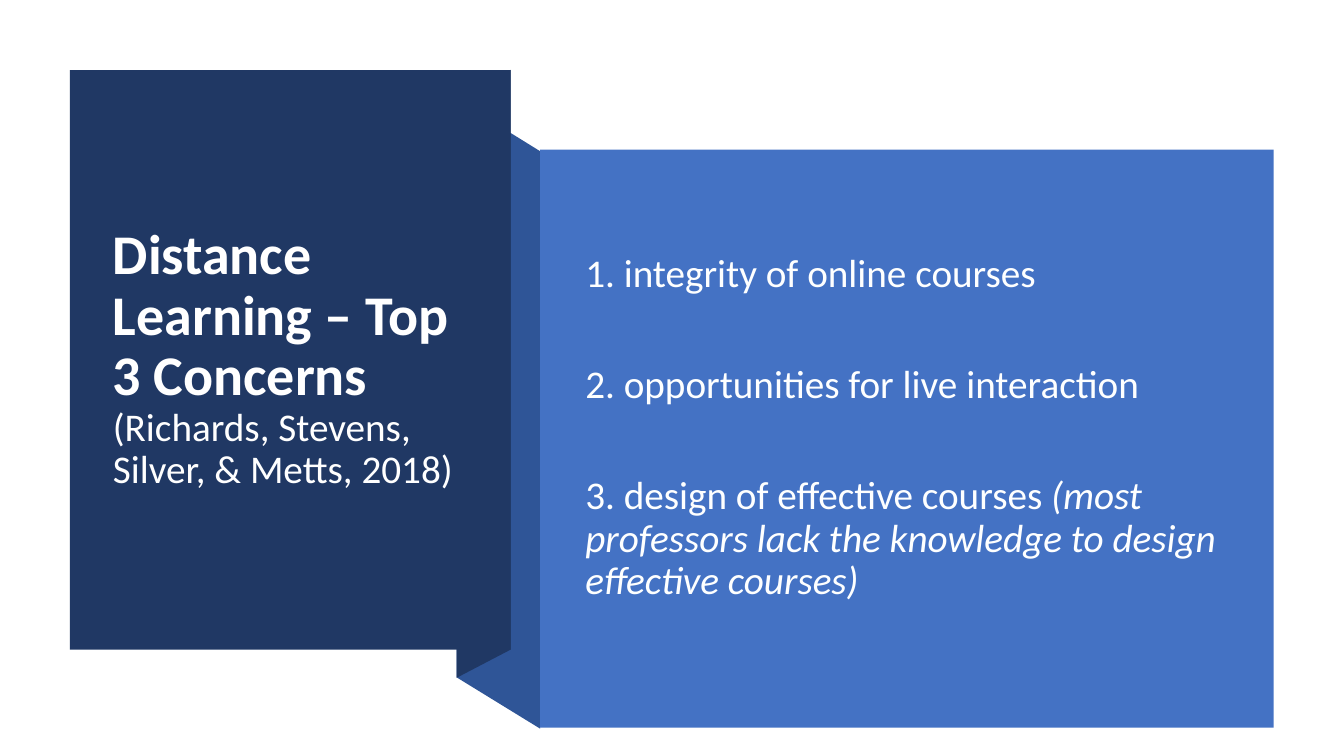
from dataclasses import dataclass

import pptx
import pptx.dml.color
import pptx.enum.shapes
import pptx.enum.text
import pptx.util
from pptx.util import Cm

COLOURS = {"navy": "203864", "fold": "2F5597", "blue": "4472C4",
           "title": "FFFFFF", "body": "FEFFFF"}
FONT = "Calibri"


@dataclass
class Panel:
    left: float
    top: float
    width: float
    height: float
    colour: str


@dataclass
class Flap:
    corners: list[tuple[float, float]]
    colour: str


@dataclass
class Span:
    text: str
    size: int = 28
    colour: str = "body"
    bold: bool = False
    italic: bool = False


FLAPS = [
    Flap([(13.61, 18.36), (11.51, 17.07), (11.51, 2.51), (13.61, 3.81)], "fold"),
    Flap([(12.87, 16.37), (11.51, 17.08), (11.51, 2.5), (12.87, 1.76)], "navy"),
]
PANELS = [
    Panel(1.76, 1.77, 11.11, 14.6, "navy"),
    Panel(13.61, 3.77, 18.49, 14.57, "blue"),
]
TITLE = [
    Span("Distance Learning – Top 3 Concerns ", 40, "title", bold=True),
    Span("(Richards, Stevens, Silver, & Metts, 2018)", 28, "title"),
]
CONCERNS = [
    [Span("1. integrity of online courses")],
    [Span("2. opportunities for live interaction")],
    [Span("3. design of effective courses "),
     Span("(most professors lack the knowledge to design effective courses)",
          italic=True)],
]


def rgb(name: str) -> pptx.dml.color.RGBColor:
    return pptx.dml.color.RGBColor.from_string(COLOURS[name])


def paint(shape, colour: str) -> None:
    shape.shadow.inherit = False
    shape.fill.solid()
    shape.fill.fore_color.rgb = rgb(colour)
    shape.line.fill.background()


def add_flap(slide, flap: Flap) -> None:
    start, *others = [(Cm(x), Cm(y)) for x, y in flap.corners]
    builder = slide.shapes.build_freeform(*start)
    builder.add_line_segments(others, close=True)
    paint(builder.convert_to_shape(), flap.colour)


def add_panel(slide, panel: Panel) -> None:
    shape = slide.shapes.add_shape(
        pptx.enum.shapes.MSO_SHAPE.RECTANGLE,
        Cm(panel.left), Cm(panel.top), Cm(panel.width), Cm(panel.height))
    paint(shape, panel.colour)


def add_span(para, span: Span) -> None:
    run = para.add_run()
    run.text = span.text
    run.font.name = FONT
    run.font.size = pptx.util.Pt(span.size)
    run.font.bold = span.bold
    run.font.italic = span.italic
    run.font.color.rgb = rgb(span.colour)


def format_frame(frame) -> None:
    frame.word_wrap = True
    frame.auto_size = pptx.enum.text.MSO_AUTO_SIZE.NONE
    frame.vertical_anchor = pptx.enum.text.MSO_ANCHOR.MIDDLE


def format_para(para) -> None:
    para.alignment = pptx.enum.text.PP_ALIGN.LEFT
    para.line_spacing = 0.9


def fill_title(slide) -> None:
    title = slide.shapes.title
    title.left, title.top = Cm(2.59), Cm(2.72)
    title.width, title.height = Cm(9.42), Cm(12.67)
    format_frame(title.text_frame)
    para = title.text_frame.paragraphs[0]
    format_para(para)
    heading, citation = TITLE
    add_span(para, heading)
    para.add_line_break()
    add_span(para, citation)
    # Bring the title in front of the panels
    slide.shapes.element.append(title.element)


def add_concerns(slide) -> None:
    box = slide.shapes.add_textbox(Cm(14.5), Cm(4.78), Cm(16.54), Cm(12.04))
    frame = box.text_frame
    format_frame(frame)
    for index, spans in enumerate(CONCERNS):
        para = frame.add_paragraph() if index else frame.paragraphs[0]
        format_para(para)
        para.space_before = pptx.util.Pt(49 if index else 0)
        for span in spans:
            add_span(para, span)


def main() -> None:
    deck = pptx.Presentation()
    deck.slide_width, deck.slide_height = Cm(33.87), Cm(19.05)
    slide = deck.slides.add_slide(deck.slide_layouts[5])

    # Folded ribbon and the two panels
    for flap in FLAPS:
        add_flap(slide, flap)
    for panel in PANELS:
        add_panel(slide, panel)

    # Text
    fill_title(slide)
    add_concerns(slide)
    deck.save("out.pptx")


if __name__ == "__main__":
    main()
